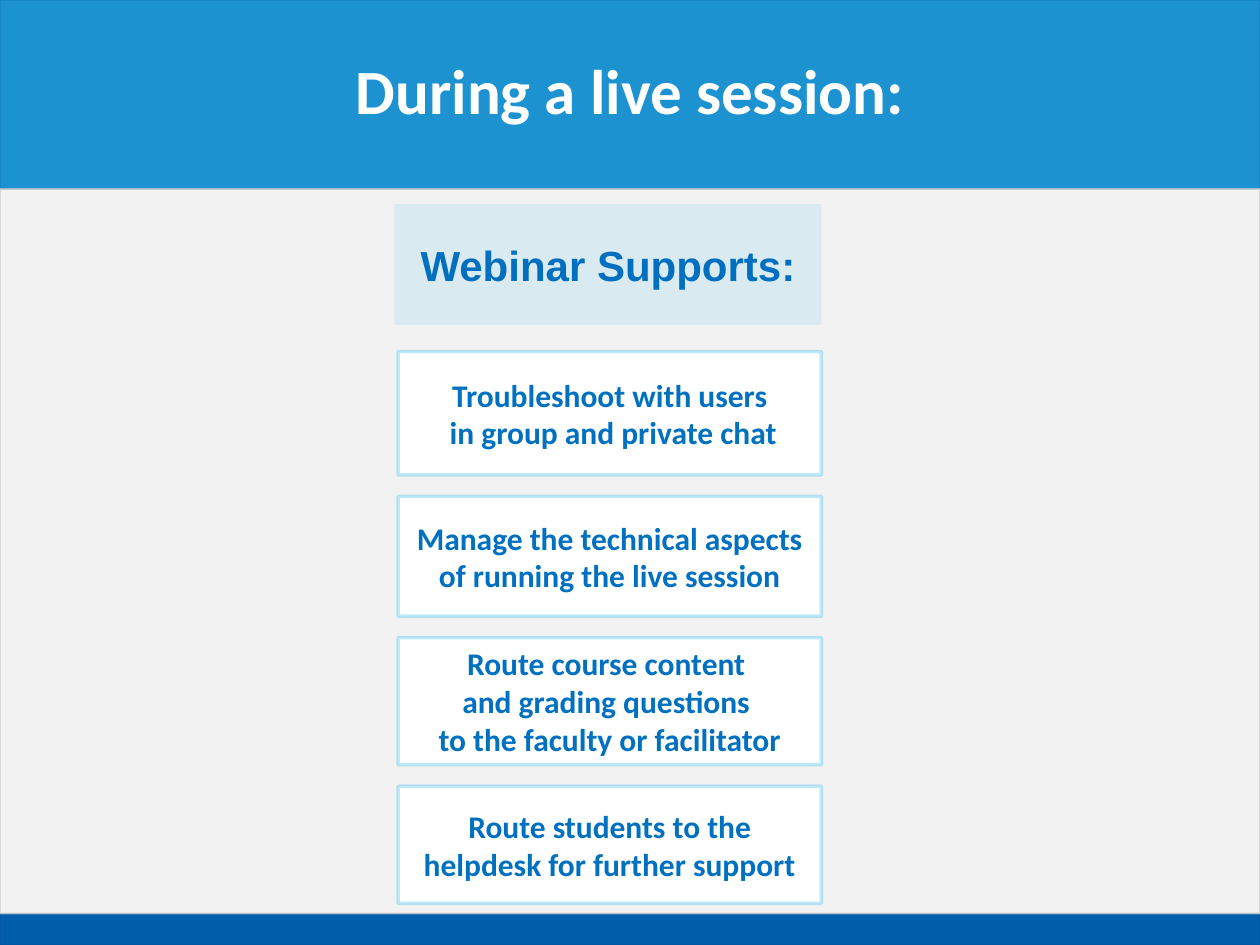
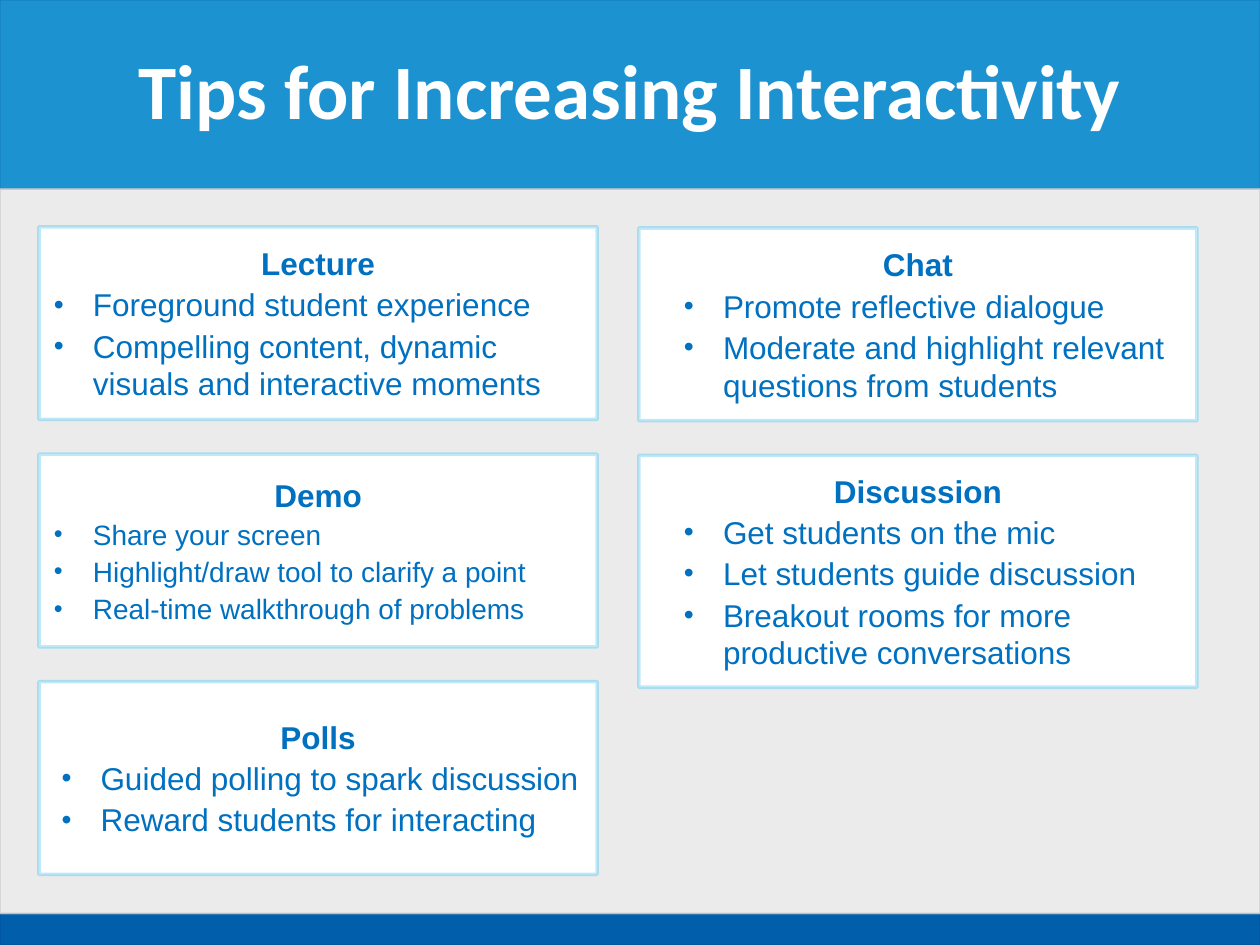
import pptx
import pptx.dml.color
import pptx.enum.shapes
import pptx.enum.text
import pptx.oxml
import pptx.oxml.ns
import pptx.util

COLUMNS, ROWS = 100, 75
SLIDE_WIDTH, SLIDE_HEIGHT = pptx.util.Inches(10), pptx.util.Inches(7.5)
HEADER_BOX = (0, 0, COLUMNS, 15)
BODY_BOX = (0, 15, COLUMNS, 57.5)
FOOTER_BOX = (0, 72.5, COLUMNS, 2.5)

SKY, NAVY, DARK_NAVY = "1D92D0", "005EAB", "002060"
CYAN, TEXT_BLUE, BANNER_BLUE = "00B0F0", "0070C0", "016FC0"
WHITE, PANEL_GREY = "FFFFFF", "D0CECE"

SUPPORTS = [
    (9.8, ["Troubleshoot with users", " in group and private chat"]),
    (9.5, ["Manage the technical aspects of running the live session"]),
    (10.1, ["Route course content ", "and grading questions ", "to the faculty or facilitator"]),
    (9.3, ["Route students to the helpdesk for further support"]),
]
LEFT_TIPS = [
    (15.3, "Lecture", 18, 0.33, [
        "Foreground student experience",
        "Compelling content, dynamic visuals and interactive moments"]),
    (15.3, "Demo", 16, 0.33, [
        "Share your screen",
        "Highlight/draw tool to clarify a point",
        "Real-time walkthrough of problems"]),
    (15.3, "Polls", 18, 0.39, [
        "Guided polling to spark discussion",
        "Reward students for interacting"]),
]
RIGHT_TIPS = [
    (15.3, "Chat", 18, 0.57, [
        "Promote reflective dialogue",
        "Moderate and highlight relevant questions from students"]),
    (18.4, "Discussion", 18, 0.57, [
        "Get students on the mic",
        "Let students guide discussion",
        "Breakout rooms for more productive conversations"]),
]


def rgb(color):
    """Turn a hex string into a colour."""
    return pptx.dml.color.RGBColor.from_string(color)


def place(shape, box):
    """Move a shape to a box given in grid columns and rows."""
    left, top, width, height = box
    shape.left, shape.width = (int(SLIDE_WIDTH * n / COLUMNS) for n in (left, width))
    shape.top, shape.height = (int(SLIDE_HEIGHT * n / ROWS) for n in (top, height))


def paint(fill, color, opacity=100):
    """Give a fill a solid colour with an opacity in percent."""
    fill.solid()
    fill.fore_color.rgb = rgb(color)
    if opacity < 100:
        color_element = fill._xPr.find(".//" + pptx.oxml.ns.qn("a:srgbClr"))
        alpha = pptx.oxml.parse_xml(
            f'<a:alpha {pptx.oxml.ns.nsdecls("a")} val="{opacity * 1000}"/>')
        color_element.append(alpha)


def outline(shape, color, width, opacity):
    """Draw a see-through outline with round corners."""
    shape.line.width = pptx.util.Pt(width)
    paint(shape.line.fill, color, opacity)
    join = pptx.oxml.parse_xml(f'<a:round {pptx.oxml.ns.nsdecls("a")}/>')
    shape.line.fill._xPr.append(join)


def add_rectangle(slide, box):
    """Add a rectangle without shadow, fill or line."""
    kind = pptx.enum.shapes.MSO_SHAPE.RECTANGLE
    shape = slide.shapes.add_shape(kind, 0, 0, 0, 0)
    place(shape, box)
    shape.shadow.inherit = False
    shape.fill.background()
    shape.line.fill.background()
    shape.text_frame.word_wrap = True
    shape.text_frame.vertical_anchor = pptx.enum.text.MSO_ANCHOR.MIDDLE
    return shape


def add_card(slide, box):
    """Add a white card with a pale cyan outline."""
    card = add_rectangle(slide, box)
    paint(card.fill, WHITE)
    outline(card, CYAN, 2, 25)
    return card


def style(paragraph, font_name, size, color, bold=True):
    """Set the font of a paragraph and centre it."""
    paragraph.alignment = pptx.enum.text.PP_ALIGN.CENTER
    font = paragraph.font
    font.name, font.size, font.bold = font_name, pptx.util.Pt(size), bold
    font.color.rgb = rgb(color)


def write_lines(shape, lines, *font):
    """Fill a shape with one styled paragraph for each line."""
    shape.text_frame.text = "\n".join(lines)
    for paragraph in shape.text_frame.paragraphs:
        style(paragraph, *font)


def add_bullet(paragraph, indent):
    """Turn a paragraph into a left-aligned bullet with a hanging indent."""
    paragraph.alignment = pptx.enum.text.PP_ALIGN.LEFT
    properties = paragraph._p.get_or_add_pPr()
    properties.set("marL", str(pptx.util.Inches(indent)))
    properties.set("indent", str(pptx.util.Inches(-0.31)))
    for tag in ('buSzPct val="90000"', 'buFont typeface="Arial"', 'buChar char="•"'):
        properties.append(pptx.oxml.parse_xml(f'<a:{tag} {pptx.oxml.ns.nsdecls("a")}/>'))


def add_frame(presentation, title, title_size, background):
    """Add a slide with title band, outlined body and footer band."""
    slide = presentation.slides.add_slide(presentation.slide_layouts[5])
    paint(slide.background.fill, background)
    header = slide.shapes.title
    place(header, HEADER_BOX)
    paint(header.fill, SKY)
    outline(header, NAVY, 0.75, 33)
    write_lines(header, [title], "Calibri", title_size, WHITE)
    header.text_frame.auto_size = pptx.enum.text.MSO_AUTO_SIZE.NONE
    header.text_frame.vertical_anchor = pptx.enum.text.MSO_ANCHOR.MIDDLE
    header.text_frame.paragraphs[0].line_spacing = 0.9
    footer = add_rectangle(slide, FOOTER_BOX)
    paint(footer.fill, NAVY)
    outline(footer, DARK_NAVY, 0.75, 15)
    outline(add_rectangle(slide, BODY_BOX), PANEL_GREY, 1, 70)
    return slide


def add_banner(slide, box, text):
    """Add the tinted heading above a stack of cards."""
    banner = add_rectangle(slide, box)
    paint(banner.fill, CYAN, 10)
    write_lines(banner, [text], "Arial", 24, BANNER_BLUE)


def add_support_card(slide, box, lines):
    """Add a card with centred bold lines."""
    write_lines(add_card(slide, box), lines, "Calibri", 18, TEXT_BLUE)


def add_tip_card(slide, box, heading, size, indent, tips):
    """Add a card with a heading and bulleted tips."""
    card = add_card(slide, box)
    write_lines(card, [heading, *tips], "Arial", size, TEXT_BLUE, False)
    first, *bullets = card.text_frame.paragraphs
    style(first, "Arial", 18, TEXT_BLUE)
    for paragraph in card.text_frame.paragraphs:
        paragraph.space_after = pptx.util.Pt(2)
    for paragraph in bullets:
        add_bullet(paragraph, indent)


def add_stack(slide, corner, width, gap, add_item, items):
    """Stack cards of given heights downwards with equal gaps."""
    left, top = corner
    for height, *content in items:
        add_item(slide, (left, top, width, height), *content)
        top += height + gap


def build_session_slide(presentation):
    """Build the slide on support during a live session."""
    slide = add_frame(presentation, "During a live session:", 36, "F2F2F2")
    add_banner(slide, (31.3, 16.2, 33.9, 9.6), "Webinar Supports:")
    add_stack(slide, (31.6, 27.9), 33.6, 1.7, add_support_card, SUPPORTS)


def build_tips_slide(presentation):
    """Build the slide with two columns of tips."""
    slide = add_frame(presentation, "Tips for Increasing Interactivity", 44, "EBEBEB")
    for corner, tips in (((3.1, 18), LEFT_TIPS), ((50.7, 18.1), RIGHT_TIPS)):
        add_stack(slide, corner, 44.3, 2.75, add_tip_card, tips)


def main():
    """Build and save the presentation."""
    presentation = pptx.Presentation()
    presentation.slide_width, presentation.slide_height = SLIDE_WIDTH, SLIDE_HEIGHT
    build_session_slide(presentation)
    build_tips_slide(presentation)
    presentation.save("out.pptx")


if __name__ == "__main__":
    main()
